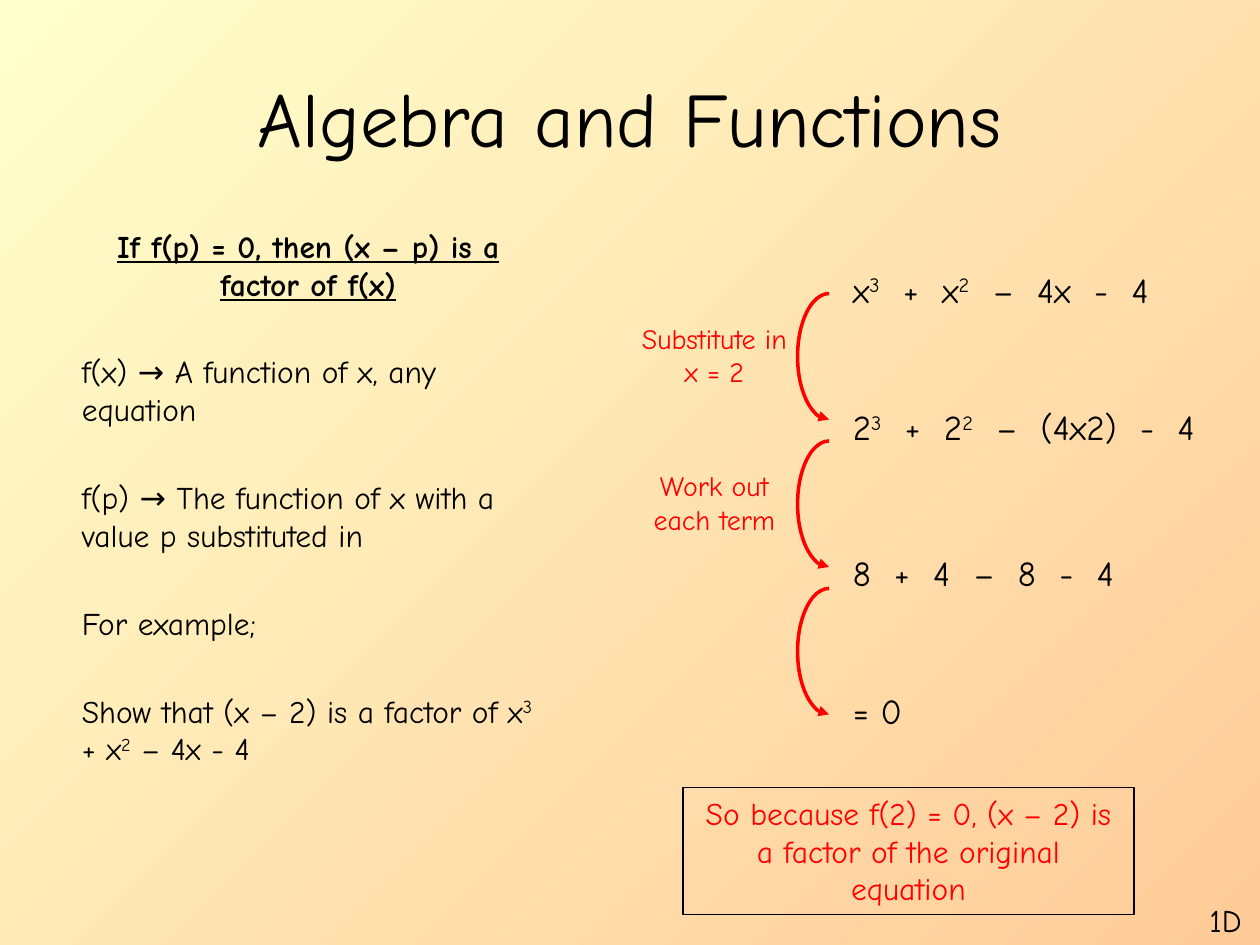
from dataclasses import dataclass

import lxml.etree
import pptx
import pptx.dml.color
import pptx.enum.shapes
import pptx.enum.text
import pptx.oxml.ns
import pptx.util

Inches = pptx.util.Inches
Pt = pptx.util.Pt
ALIGN = pptx.enum.text.PP_ALIGN
ANCHOR = pptx.enum.text.MSO_ANCHOR
FONT = "Comic Neue"
COLORS = {"ink": "000000", "note": "FF0000", "pale": "FFFFCC", "warm": "FFCC99"}


@dataclass
class Label:
    text: str  # ^ opens and closes a superscript
    left: float
    top: float
    width: float
    height: float
    size: int = 20
    color: str = "ink"
    align: ALIGN = ALIGN.LEFT


def tint(name: str) -> pptx.dml.color.RGBColor:
    return pptx.dml.color.RGBColor.from_string(COLORS[name])


def write(para, text: str, size: int, color: str = "ink", align=ALIGN.LEFT) -> None:
    para.alignment = align
    para.font.name = FONT
    para.font.size = Pt(size)
    para.font.color.rgb = tint(color)
    for index, part in enumerate(text.split("^")):
        run = para.add_run()
        run.text = part
        if index % 2:
            run._r.get_or_add_rPr().set("baseline", "30000")


def add_label(slide, label: Label, framed: bool = False):
    area = [Inches(n) for n in (label.left, label.top, label.width, label.height)]
    if framed:
        shape = slide.shapes.add_shape(pptx.enum.shapes.MSO_SHAPE.RECTANGLE, *area)
        shape.shadow.inherit = False
        shape.fill.background()
        shape.line.color.rgb = tint("ink")
        shape.line.width = Pt(0.75)
    else:
        shape = slide.shapes.add_textbox(*area)
    frame = shape.text_frame
    frame.word_wrap = True
    frame.vertical_anchor = ANCHOR.TOP
    write(frame.paragraphs[0], label.text, label.size, label.color, label.align)
    return shape


def add_arc(slide, left: float, top: float, width: float, height: float) -> None:
    """Draw the left half of an oval, with an arrowhead at its foot."""
    right = Inches(left + width)
    pen = slide.shapes.build_freeform(right, Inches(top))
    pen.add_line_segments(
        [(Inches(left), Inches(top + height / 2)), (right, Inches(top + height))],
        close=False,
    )
    shape = pen.convert_to_shape()
    shape.shadow.inherit = False
    shape.fill.background()
    shape.line.color.rgb = tint("note")
    shape.line.width = Pt(2)
    # Round the outline
    qn = pptx.oxml.ns.qn
    route = next(shape._element.iter(qn("a:path")))
    for side in route.findall(qn("a:lnTo")):
        route.remove(side)
    lxml.etree.SubElement(
        route, qn("a:arcTo"), wR=str(Inches(width)), hR=str(Inches(height / 2)),
        stAng="16200000", swAng="-10800000",
    )
    lxml.etree.SubElement(shape.line._get_or_add_ln(), qn("a:tailEnd"), type="triangle")


TITLE = Label("Algebra and Functions", 0.5, 0.3, 9, 1.25, 44, align=ALIGN.CENTER)
RULE = Label("If f(p) = 0, then (x – p) is a factor of f(x)",
             0.17, 1.75, 4.17, 4.95, 18, align=ALIGN.CENTER)
POINTS = [
    "f(x) → A function of x, any equation",
    "f(p) → The function of x with a value p substituted in",
    "For example;",
    "Show that (x – 2) is a factor of x^3^ + x^2^ – 4x - 4",
]
STEPS = [
    Label("x^3^  +  x^2^  –  4x  -  4", 6.67, 2.08, 2.67, 0.43),
    Label("2^3^  +  2^2^  –  (4x2)  -  4", 6.67, 3.17, 3.08, 0.43),
    Label("8  +  4  –  8  -  4", 6.67, 4.33, 2.33, 0.43),
    Label("= 0", 6.67, 5.42, 0.75, 0.43),
]
NOTES = ["Substitute in x = 2", "Work out each term"]
RESULT = Label("So because f(2) = 0, (x – 2) is a factor of the original equation",
               5.42, 6.25, 3.58, 1.01, 18, "note", ALIGN.CENTER)
PAGE = Label("1D", 9.5, 7.1, 0.5, 0.4, 18)
ARC_TOP, PITCH = 2.33, 1.17


def main() -> None:
    deck = pptx.Presentation()
    deck.slide_width, deck.slide_height = Inches(10), Inches(7.5)
    slide = deck.slides.add_slide(deck.slide_layouts[6])

    # Background
    fill = slide.background.fill
    fill.gradient()
    fill.gradient_angle = 315
    for stop, name, place in zip(fill.gradient_stops, ("pale", "warm"), (0, 1)):
        stop.color.rgb = tint(name)
        stop.position = place

    # Title and page mark
    title = add_label(slide, TITLE)
    title.text_frame.vertical_anchor = ANCHOR.MIDDLE
    add_label(slide, PAGE)

    # Rule and points on the left
    frame = add_label(slide, RULE).text_frame
    frame.margin_left = Inches(0.48)
    frame.paragraphs[0].font.bold = True
    frame.paragraphs[0].font.underline = True
    for point in POINTS:
        para = frame.add_paragraph()
        para.space_before = Pt(28.6)
        write(para, point, 18)

    # Working on the right
    for step in STEPS:
        add_label(slide, step)
    for index in range(len(STEPS) - 1):
        add_arc(slide, 6.33, ARC_TOP + index * PITCH, 0.25, 1)
    for index, note in enumerate(NOTES):
        add_label(slide, Label(note, 4.92, 2.5 + index * PITCH, 1.5, 0.64,
                               16, "note", ALIGN.CENTER))

    # Result
    add_label(slide, RESULT, framed=True)
    deck.save("out.pptx")


if __name__ == "__main__":
    main()
